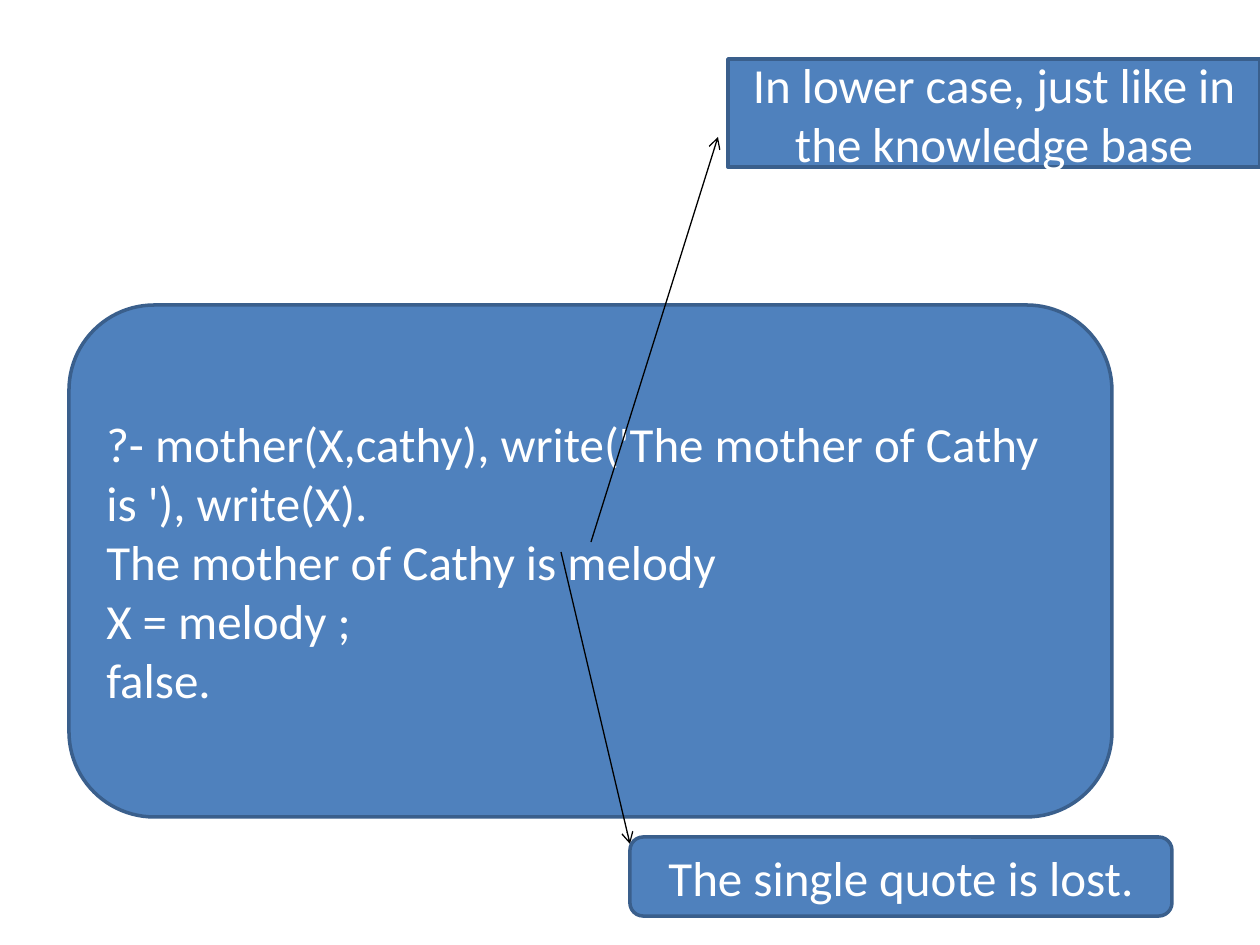
import pptx
import pptx.dml.color
import pptx.enum.shapes
import pptx.enum.text
import pptx.oxml
import pptx.oxml.ns
import pptx.util
from dataclasses import dataclass

SHAPES = pptx.enum.shapes.MSO_SHAPE
ALIGN = pptx.enum.text.PP_ALIGN


@dataclass(frozen=True)
class Theme:
    fill: str = "4F81BD"
    border: str = "3A5F8C"
    text: str = "FFFFFF"
    arrow: str = "000000"
    font: str = "Calibri"
    size: int = 28
    border_width: float = 2
    arrow_width: float = 0.75


THEME = Theme()
PX_PER_INCH = 126
SLIDE_SIZE = (1260, 945)

QUERY = [
    "?- mother(X,cathy), write('The mother of Cathy is '), write(X).",
    "The mother of Cathy is melody",
    "X = melody ;",
    "false.",
]

# Back to front: boxes hold (left, top, width, height), arrows (from, to).
CONTENT = [
    {"box": (69, 305, 1043, 512), "shape": SHAPES.ROUNDED_RECTANGLE,
     "lines": QUERY, "align": ALIGN.LEFT},
    {"arrow": ((591, 542), (718, 137))},
    {"box": (728, 59, 532, 108), "shape": SHAPES.RECTANGLE,
     "lines": ["In lower case, just like in the knowledge base"], "align": ALIGN.CENTER},
    {"arrow": ((561, 552), (630, 844))},
    {"box": (630, 837, 542, 79), "shape": SHAPES.ROUNDED_RECTANGLE,
     "lines": ["The single quote is lost."], "align": ALIGN.CENTER},
]


def emu(*lengths):
    return [pptx.util.Emu(round(px * 914400 / PX_PER_INCH)) for px in lengths]


def rgb(code):
    return pptx.dml.color.RGBColor.from_string(code)


def style_line(line, color, width):
    line.color.rgb = rgb(color)
    line.width = pptx.util.Pt(width)


def add_box(slide, item):
    box = slide.shapes.add_shape(item["shape"], *emu(*item["box"]))
    box.shadow.inherit = False
    box.fill.solid()
    box.fill.fore_color.rgb = rgb(THEME.fill)
    style_line(box.line, THEME.border, THEME.border_width)

    frame = box.text_frame
    frame.word_wrap = True
    frame.vertical_anchor = pptx.enum.text.MSO_ANCHOR.MIDDLE
    frame.text = "\n".join(item["lines"])
    font_format = {"name": THEME.font, "size": pptx.util.Pt(THEME.size)}
    for paragraph in frame.paragraphs:
        paragraph.alignment = item["align"]
        for run in paragraph.runs:
            for attribute, value in font_format.items():
                setattr(run.font, attribute, value)
            run.font.color.rgb = rgb(THEME.text)


def add_arrow(slide, item):
    start, end = item["arrow"]
    arrow = slide.shapes.add_connector(
        pptx.enum.shapes.MSO_CONNECTOR.STRAIGHT, *emu(*start, *end))
    style_line(arrow.line, THEME.arrow, THEME.arrow_width)
    properties = arrow.element.spPr
    outline = properties.find(pptx.oxml.ns.qn("a:ln"))
    namespace = pptx.oxml.ns.nsdecls("a")
    outline.append(pptx.oxml.parse_xml(f'<a:tailEnd {namespace} type="arrow"/>'))
    properties.append(pptx.oxml.parse_xml(f"<a:effectLst {namespace}/>"))


def main():
    deck = pptx.Presentation()
    deck.slide_width, deck.slide_height = emu(*SLIDE_SIZE)
    slide = deck.slides.add_slide(deck.slide_layouts[6])
    for item in CONTENT:
        if "box" in item:
            add_box(slide, item)
        else:
            add_arrow(slide, item)
    deck.save("out.pptx")


if __name__ == "__main__":
    main()
